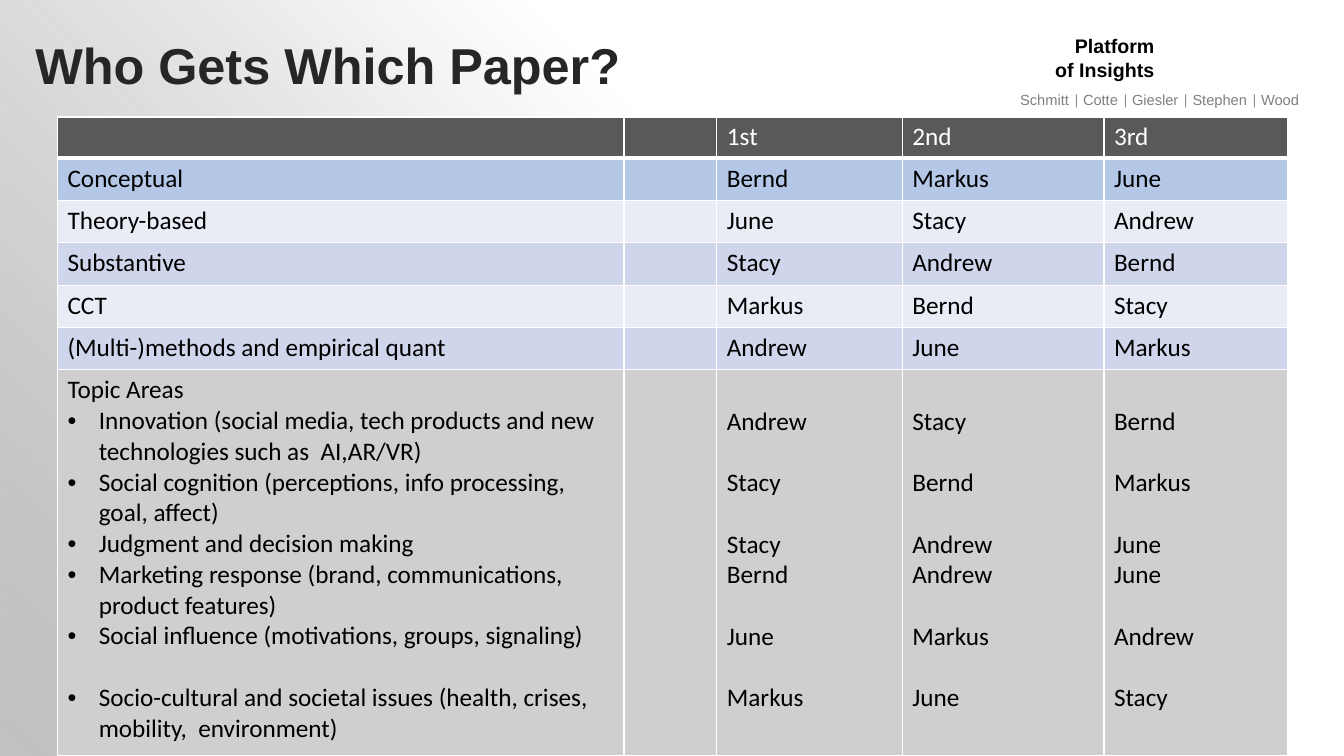
from lxml import etree
from pptx import Presentation
from pptx.dml.color import RGBColor
from pptx.enum.shapes import MSO_SHAPE
from pptx.enum.text import MSO_ANCHOR, MSO_AUTO_SIZE, PP_ALIGN
from pptx.oxml.ns import qn
from pptx.util import Emu, Pt

RECTANGLE = MSO_SHAPE.RECTANGLE
TOP = MSO_ANCHOR.TOP
FIT_SHAPE = MSO_AUTO_SIZE.SHAPE_TO_FIT_TEXT
FIT_NONE = MSO_AUTO_SIZE.NONE
LEFT, RIGHT = PP_ALIGN.LEFT, PP_ALIGN.RIGHT

EMU_PER_PX = 9144
TITLE_ONLY = 5
SLIDE_BOX = (0, 0, 1333, 750)
TITLE_BOX = (25, 29, 975, 111)
PLATFORM_BOX = (1012, 29, 143, 57)
AUTHORS_BOX = (1002, 85, 302, 28)
TABLE_BOX = (57, 116, 1220, 634)

COLUMN_WIDTHS = (562, 92, 184, 200, 182)
ROW_HEIGHTS = (41, 42, 42, 42, 42, 42, 383)
ROW_FILLS = ("595959", "B4C7E7", "E9EBF5", "CFD5EA", "E9EBF5", "CFD5EA", "D0CECE")
LINE_POINTS = 22
CELL_MARGIN = 5
FIRST_TOPIC_MARGIN = 36
BULLET_INDENT = 31
NAME_COLUMN = 2

AUTHORS = ("Schmitt", "Cotte", "Giesler", "Stephen", "Wood")
PAPER_ROWS = (
    ("", "", "1st", "2nd", "3rd"),
    ("Conceptual", "", "Bernd", "Markus", "June"),
    ("Theory-based", "", "June", "Stacy", "Andrew"),
    ("Substantive", "", "Stacy", "Andrew", "Bernd"),
    ("CCT", "", "Markus", "Bernd", "Stacy"),
    ("(Multi-)methods and empirical quant", "", "Andrew", "June", "Markus"),
)
TOPICS = (
    ("Innovation (social media, tech products and new technologies such as  AI,AR/VR)", 0,
     ("Andrew", "Stacy", "Bernd"), 0),
    ("Social cognition (perceptions, info processing, goal, affect)", 0,
     ("Stacy", "Bernd", "Markus"), 1),
    ("Judgment and decision making", 0, ("Stacy", "Andrew", "June"), 1),
    ("Marketing response (brand, communications, product features)", 0,
     ("Bernd", "Andrew", "June"), 0),
    ("Social influence (motivations, groups, signaling)", 0,
     ("June", "Markus", "Andrew"), 1),
    ("Socio-cultural and societal issues (health, crises, mobility,  environment)", 1,
     ("Markus", "June", "Stacy"), 1),
)
TITLE_FONT = {"name": "Arial", "size": Pt(36), "bold": True, "color": "262626"}
PLATFORM_FONT = {"name": "Arial", "size": Pt(14), "bold": True, "color": "000000"}
AUTHOR_FONT = {"name": "Arial", "size": Pt(10.5), "color": "808080"}
DIVIDER_FONT = {**AUTHOR_FONT, "name": "Calibri"}
CELL_FONT = {"name": "Calibri", "size": Pt(18), "bold": False, "color": "000000"}
HEADER_FONT = {**CELL_FONT, "color": "FFFFFF"}


def px(length):
    return Emu(length * EMU_PER_PX)


def box_emu(box):
    return [px(length) for length in box]


def rgb(color):
    return RGBColor.from_string(color)


def set_attributes(target, values):
    for name, value in values.items():
        setattr(target, name, value)


def add_run(paragraph, text, font):
    run = paragraph.add_run()
    run.text = text
    set_attributes(run.font, {name: value for name, value in font.items() if name != "color"})
    run.font.color.rgb = rgb(font["color"])


def add_element(parent, tag, **attributes):
    element = etree.SubElement(parent, qn(tag))
    for name, value in attributes.items():
        element.set(name, str(value))
    return element


def add_background(slide, box):
    shape = slide.shapes.add_shape(RECTANGLE, *box_emu(box))
    shape.shadow.inherit = False
    shape.line.fill.background()
    shape.fill.gradient()
    shape.fill.gradient_angle = 225
    stops = shape._element.spPr.find(qn("a:gradFill")).find(qn("a:gsLst"))
    for stop in list(stops):
        stops.remove(stop)
    for position, color, alpha in ((0, "FFFFFF", 100), (39, "FFFFFF", 100), (100, "A5A5A5", 43)):
        stop = add_element(stops, "a:gs", pos=position * 1000)
        stop_color = add_element(stop, "a:srgbClr", val=color)
        add_element(stop_color, "a:alpha", val=alpha * 1000)


def add_platform(slide, box):
    frame = slide.shapes.add_textbox(*box_emu(box)).text_frame
    set_attributes(frame, {"word_wrap": True, "auto_size": FIT_SHAPE})
    for index, text in enumerate(("Platform", "of Insights")):
        paragraph = frame.add_paragraph() if index else frame.paragraphs[0]
        set_attributes(paragraph, {"alignment": RIGHT, "line_spacing": Pt(16.8)})
        add_run(paragraph, text, PLATFORM_FONT)


def add_authors(slide, box):
    frame = slide.shapes.add_textbox(*box_emu(box)).text_frame
    set_attributes(frame, {"word_wrap": False, "auto_size": FIT_SHAPE})
    paragraph = frame.paragraphs[0]
    for author in AUTHORS[:-1]:
        add_run(paragraph, author + " ", AUTHOR_FONT)
        add_run(paragraph, "| ", DIVIDER_FONT)
    add_run(paragraph, AUTHORS[-1], AUTHOR_FONT)


def style_cell(cell, fill, bottom_width):
    set_attributes(cell, {"margin_top": px(CELL_MARGIN), "margin_bottom": px(CELL_MARGIN)})
    properties = cell._tc.get_or_add_tcPr()
    for tag, width in (("a:lnL", 1), ("a:lnR", 1), ("a:lnT", 1), ("a:lnB", bottom_width)):
        line = add_element(properties, tag, w=Pt(width))
        add_element(add_element(line, "a:solidFill"), "a:srgbClr", val="FFFFFF")
    cell.fill.solid()
    cell.fill.fore_color.rgb = rgb(fill)


def add_bullet(paragraph):
    properties = paragraph._p.get_or_add_pPr()
    properties.set("marL", str(px(BULLET_INDENT)))
    properties.set("indent", str(-px(BULLET_INDENT)))
    add_element(properties, "a:buFont", typeface="Arial")
    add_element(properties, "a:buChar", char="•")


def fill_topics(cells):
    add_run(cells[0].text_frame.paragraphs[0], "Topic Areas", CELL_FONT)
    for index, (topic, topic_gap, names, name_gap) in enumerate(TOPICS):
        paragraph = cells[0].text_frame.add_paragraph()
        paragraph.space_before = Pt(LINE_POINTS * topic_gap)
        add_bullet(paragraph)
        add_run(paragraph, topic, CELL_FONT)
        for cell, name in zip(cells[NAME_COLUMN:], names):
            frame = cell.text_frame
            paragraph = frame.add_paragraph() if index else frame.paragraphs[0]
            paragraph.space_before = Pt(LINE_POINTS * name_gap)
            add_run(paragraph, name, CELL_FONT)
    for cell in cells[NAME_COLUMN:]:
        cell.margin_top = px(FIRST_TOPIC_MARGIN)


def add_paper_table(slide, box):
    table = slide.shapes.add_table(len(ROW_HEIGHTS), len(COLUMN_WIDTHS), *box_emu(box)).table
    set_attributes(table, {"first_row": False, "horz_banding": False})
    for column, width in zip(table.columns, COLUMN_WIDTHS):
        column.width = px(width)
    for index, (row, height, fill) in enumerate(zip(table.rows, ROW_HEIGHTS, ROW_FILLS)):
        row.height = px(height)
        for cell in row.cells:
            style_cell(cell, fill, 1 if index else 3)
    for index, texts in enumerate(PAPER_ROWS):
        for cell, text in zip(table.rows[index].cells, texts):
            if text:
                add_run(cell.text_frame.paragraphs[0], text, CELL_FONT if index else HEADER_FONT)
    fill_topics(list(table.rows[len(PAPER_ROWS)].cells))


def place_title(slide, box):
    title = slide.shapes.title
    set_attributes(title, dict(zip(("left", "top", "width", "height"), box_emu(box))))
    frame = title.text_frame
    set_attributes(frame, {"vertical_anchor": TOP, "word_wrap": True, "auto_size": FIT_NONE})
    frame.paragraphs[0].alignment = LEFT
    add_run(frame.paragraphs[0], "Who Gets Which Paper?", TITLE_FONT)
    slide.shapes._spTree.append(title._element)


def main():
    presentation = Presentation()
    presentation.slide_width, presentation.slide_height = box_emu(SLIDE_BOX[2:])
    slide = presentation.slides.add_slide(presentation.slide_layouts[TITLE_ONLY])
    for _ in range(2):
        add_background(slide, SLIDE_BOX)
    add_platform(slide, PLATFORM_BOX)
    add_authors(slide, AUTHORS_BOX)
    add_paper_table(slide, TABLE_BOX)
    place_title(slide, TITLE_BOX)
    presentation.save("out.pptx")


if __name__ == "__main__":
    main()
